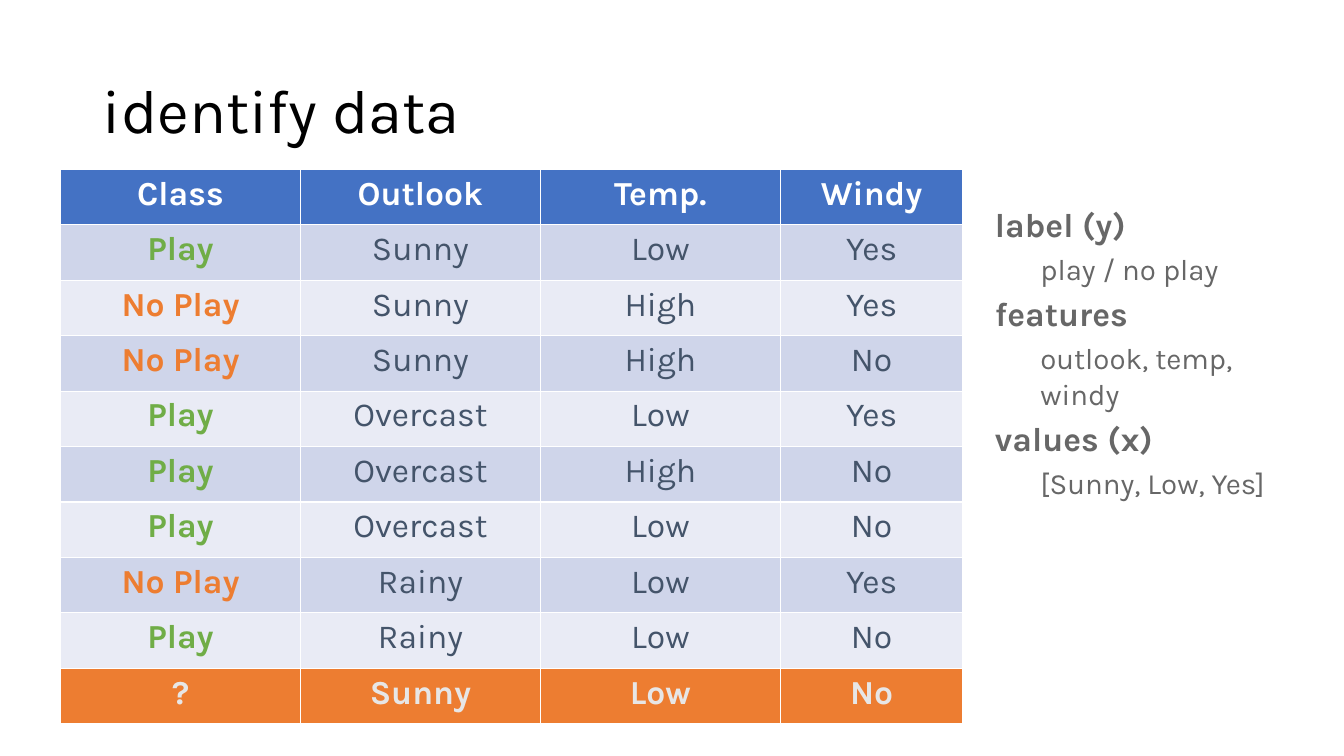
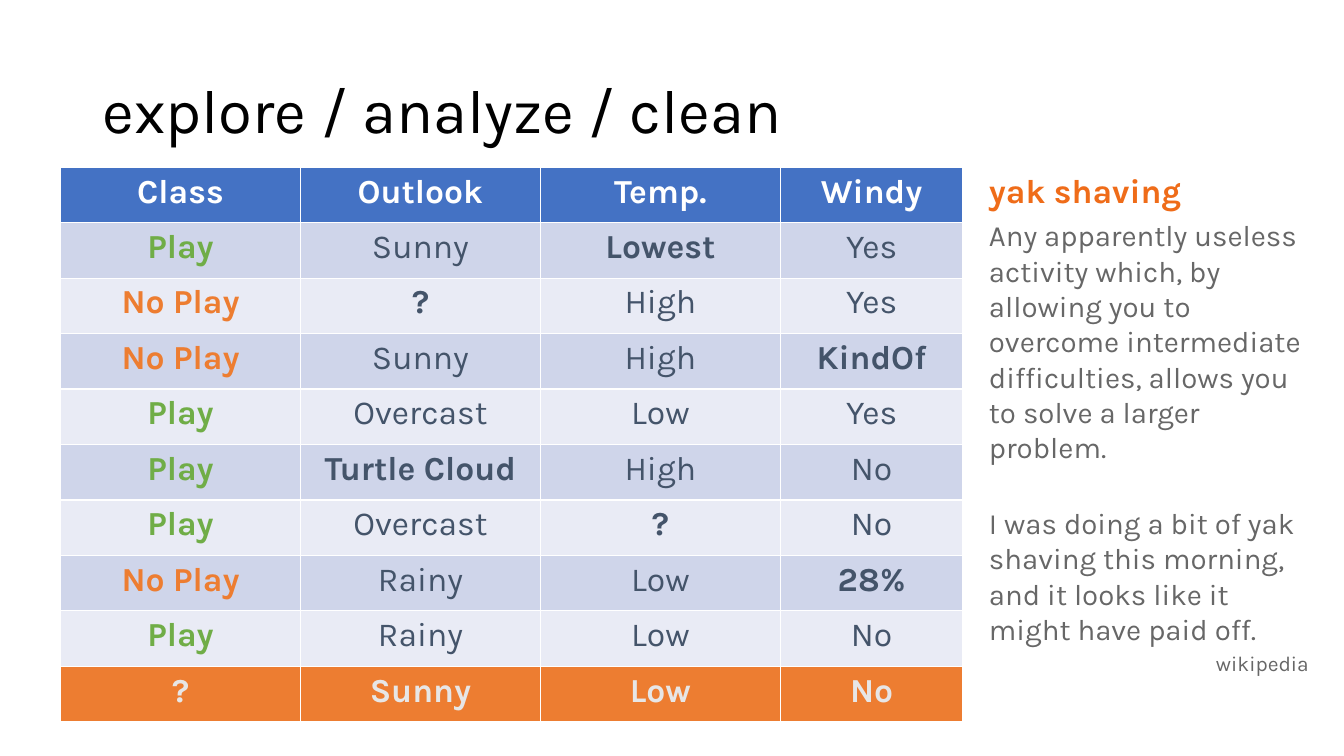
from lxml.etree import SubElement
from pptx import Presentation
from pptx.dml.color import RGBColor
from pptx.enum.text import MSO_ANCHOR, PP_ALIGN
from pptx.oxml.ns import qn
from pptx.util import Inches, Pt

FONT = "Karla"
BLACK = RGBColor(0x00, 0x00, 0x00)
WHITE = RGBColor(0xFF, 0xFF, 0xFF)
BLUE = RGBColor(0x44, 0x72, 0xC4)
DARK_BAND = RGBColor(0xCF, 0xD5, 0xEA)
LIGHT_BAND = RGBColor(0xE9, 0xEB, 0xF5)
SLATE = RGBColor(0x44, 0x54, 0x6A)
GREEN = RGBColor(0x70, 0xAD, 0x47)
ORANGE = RGBColor(0xED, 0x7D, 0x31)
DEEP_ORANGE = RGBColor(0xEF, 0x6C, 0x19)
PALE_GRAY = RGBColor(0xE7, 0xE6, 0xE6)
GRAY = RGBColor(0x67, 0x67, 0x67)

COLUMN_WIDTHS = (2.38, 2.38, 2.38, 1.81)
ROW_HEIGHT = 0.55
CLASS_COLORS = {"Play": GREEN, "No Play": ORANGE}
WEATHER = (
    ("Class", "Outlook", "Temp.", "Windy"),
    ("Play", "Sunny", "Low", "Yes"),
    ("No Play", "Sunny", "High", "Yes"),
    ("No Play", "Sunny", "High", "No"),
    ("Play", "Overcast", "Low", "Yes"),
    ("Play", "Overcast", "High", "No"),
    ("Play", "Overcast", "Low", "No"),
    ("No Play", "Rainy", "Low", "Yes"),
    ("Play", "Rainy", "Low", "No"),
    ("?", "Sunny", "Low", "No"),
)
DIRTY_VALUES = {
    (1, 2): "Lowest",
    (2, 1): "?",
    (3, 3): "KindOf",
    (5, 1): "Turtle Cloud",
    (6, 2): "?",
    (7, 3): "28%",
}


def add_run(paragraph, text, size, color, bold=False):
    run = paragraph.add_run()
    run.text = text
    run.font.name = FONT
    run.font.size = Pt(size)
    run.font.bold = bold
    run.font.color.rgb = color


def add_text_frame(slide, left, top, width, height):
    frame = slide.shapes.add_textbox(
        Inches(left), Inches(top), Inches(width), Inches(height)).text_frame
    frame.word_wrap = True
    return frame


def add_title(slide, text):
    frame = add_text_frame(slide, 0.92, 0.4, 11.5, 1.45)
    frame.vertical_anchor = MSO_ANCHOR.MIDDLE
    title = frame.paragraphs[0]
    title.line_spacing = 0.9
    add_run(title, text, 44, BLACK)


def add_note(frame, text, size=21, color=GRAY, bold=False, level=0, before=5,
             align=PP_ALIGN.LEFT):
    is_first = not frame.paragraphs[0].runs
    note = frame.paragraphs[0] if is_first else frame.add_paragraph()
    note.level = level
    note.alignment = align
    margins = note._p.get_or_add_pPr()
    margins.set("marL", str(Inches(0.04 + 0.45 * level)))
    margins.set("indent", "0")
    if not is_first:
        note.space_before = Pt(before)
    add_run(note, text, size, color, bold)


def add_cell_borders(cell):
    properties = cell._tc.get_or_add_tcPr()
    for side in ("a:lnL", "a:lnR", "a:lnT", "a:lnB"):
        border = SubElement(properties, qn(side), w=str(Pt(1)))
        fill = SubElement(border, qn("a:solidFill"))
        SubElement(fill, qn("a:srgbClr"), val=str(WHITE))


def cell_style(row, column, is_dirty):
    if row == 0:
        return BLUE, WHITE, True
    if row == len(WEATHER) - 1:
        return ORANGE, PALE_GRAY, True
    band = DARK_BAND if row % 2 else LIGHT_BAND
    if column == 0:
        return band, CLASS_COLORS[WEATHER[row][0]], True
    return band, SLATE, is_dirty


def fill_cell(cell, text, fill_color, text_color, bold):
    cell.margin_left = cell.margin_right = Inches(0.2)
    cell.margin_top = cell.margin_bottom = Inches(0.05)
    add_cell_borders(cell)
    cell.fill.solid()
    cell.fill.fore_color.rgb = fill_color
    paragraph = cell.text_frame.paragraphs[0]
    paragraph.alignment = PP_ALIGN.CENTER
    add_run(paragraph, text, 24, text_color, bold)


def add_weather_table(slide, top, changes):
    table = slide.shapes.add_table(
        len(WEATHER), len(COLUMN_WIDTHS), Inches(0.6), Inches(top),
        Inches(sum(COLUMN_WIDTHS)), Inches(ROW_HEIGHT * len(WEATHER))).table
    table.horz_banding = False
    for column, width in zip(table.columns, COLUMN_WIDTHS):
        column.width = Inches(width)
    for row, values in enumerate(WEATHER):
        for column, value in enumerate(values):
            place = (row, column)
            fill_cell(table.cell(row, column), changes.get(place, value),
                      *cell_style(row, column, place in changes))


def build_identify(slide):
    add_title(slide, "identify data")
    add_weather_table(slide, 1.68, {})
    terms = add_text_frame(slide, 9.73, 1.97, 3.41, 3.92)
    for term, example in (
        ("label (y)", "play / no play"),
        ("features", "outlook, temp, windy"),
        ("values (x)", "[Sunny, Low, Yes]"),
    ):
        add_note(terms, term, size=24, bold=True)
        add_note(terms, example, level=1)


def build_explore(slide):
    add_title(slide, "explore / analyze / clean")
    add_weather_table(slide, 1.66, DIRTY_VALUES)
    definition = add_text_frame(slide, 9.67, 1.64, 3.41, 4.74)
    add_note(definition, "yak shaving", size=24, color=DEEP_ORANGE, bold=True)
    add_note(definition, "Any apparently useless activity which, by allowing "
             "you to overcome intermediate difficulties, allows you to solve "
             "a larger problem.")
    add_note(definition, "I was doing a bit of yak shaving this morning, and "
             "it looks like it might have paid off.", before=29)
    add_note(definition, "wikipedia", size=15, before=3, align=PP_ALIGN.RIGHT)


def main():
    deck = Presentation()
    deck.slide_width = Inches(13.33)
    deck.slide_height = Inches(7.5)
    for build in (build_identify, build_explore):
        build(deck.slides.add_slide(deck.slide_layouts[6]))
    deck.save("out.pptx")


if __name__ == "__main__":
    main()
